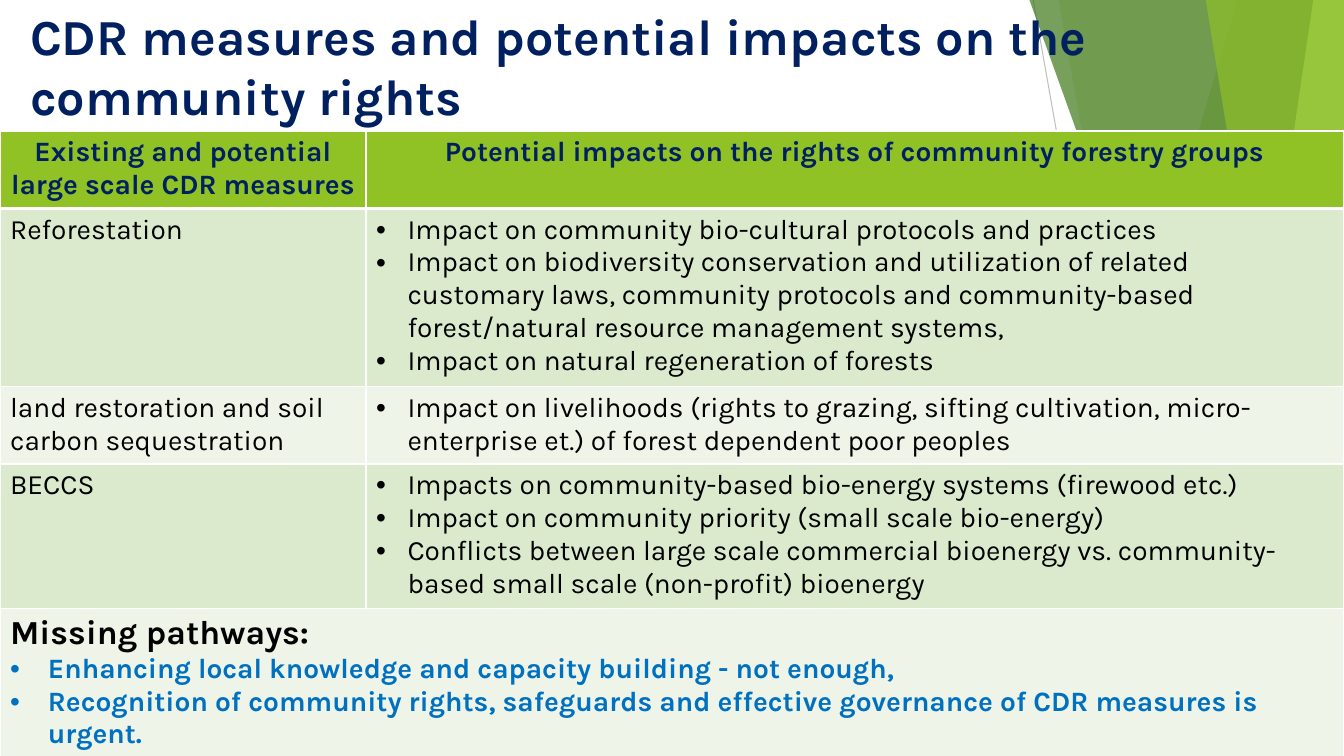
import pptx
import pptx.dml.color
import pptx.enum.shapes
import pptx.enum.text
import pptx.oxml
import pptx.oxml.ns
import pptx.util
from lxml import etree

Pt = pptx.util.Pt
qn = pptx.oxml.ns.qn
ALIGN = pptx.enum.text.PP_ALIGN
W, H, TOP = 960, 540, -0.7
NAVY, GREEN, WHITE, BLACK, BLUE = "002060", "90C226", "FFFFFF", "000000", "0070C0"
BANDS = "DBE9CD", "EEF4E8"

HEADINGS = ("Existing and potential large scale CDR measures",
            "Potential impacts on the rights of community forestry groups")
MEASURES = [
    ("Reforestation", [
        "Impact on community bio-cultural protocols and practices",
        "Impact on biodiversity conservation and utilization of related customary laws, "
        "community protocols and community-based forest/natural resource management systems,",
        "Impact on natural regeneration of forests"]),
    ("land restoration and soil carbon sequestration", [
        "Impact on livelihoods (rights to grazing, sifting cultivation, "
        "micro-enterprise et.) of forest dependent poor peoples"]),
    ("BECCS", [
        "Impacts on community-based bio-energy systems (firewood etc.)",
        "Impact on community priority (small scale bio-energy)",
        "Conflicts between large scale commercial bioenergy vs. "
        "community-based small scale (non-profit) bioenergy"]),
]
MISSING = ["Enhancing local knowledge and capacity building - not enough,",
           "Recognition of community rights, safeguards and effective governance "
           "of CDR measures is urgent."]
COLUMNS = 261.4, 698.4
ROWS = 54, 124.3, 53.8, 101.4, 105.7

LINES = [((738, 0), (833.8, H), "BFBFBF"), ((W, 290.2), (584.6, H), "D9D9D9")]
TRIANGLES = {
    "middle": ((703.4, 239.8, 256.6, 300.2), 1, "54A021", 72),
    "right": ((816.5, 283, 143.5, 257), 1, GREEN, 80),
    "left": ((0, 316.1, 35.3, 223.9), 0, GREEN, 85),
}
BLADES = {
    "pale": (884.2, 722.9, GREEN, 30),
    "faint": (756, 851.8, GREEN, 20),
    "dark": (735.1, 929.5, "3F7819", 70),
    "light": (938.2, 858.2, "C0E474", 70),
    "bright": (861.1, 949, GREEN, 65),
}


def rgb(value):
    """Return the colour for a hex string."""
    return pptx.dml.color.RGBColor.from_string(value)


def paint(s, color, opacity):
    """Give a shape a translucent fill without line or shadow."""
    s.shadow.inherit = False
    s.line.fill.background()
    s.fill.solid()
    s.fill.fore_color.rgb = rgb(color)
    clr = s.fill._xPr.find(".//" + qn("a:srgbClr"))
    etree.SubElement(clr, qn("a:alpha"), val=str(opacity * 1000))


def add_line(shapes, start, end, color):
    """Draw a thin straight line."""
    kind = pptx.enum.shapes.MSO_CONNECTOR.STRAIGHT
    s = shapes.add_connector(kind, *map(Pt, start + end))
    s.line.width = Pt(0.75)
    s.line.color.rgb = rgb(color)
    etree.SubElement(s._element.spPr, qn("a:effectLst"))


def add_blade(shapes, top_x, bottom_x, color, opacity):
    """Draw a slanted panel reaching the right edge of the slide."""
    builder = shapes.build_freeform(Pt(top_x), Pt(TOP))
    corners = (W, TOP), (W, H), (bottom_x, H)
    builder.add_line_segments([(Pt(x), Pt(y)) for x, y in corners])
    paint(builder.convert_to_shape(), color, opacity)


def add_triangle(shapes, box, apex, color, opacity):
    """Draw a triangle with its apex at the given share of its width."""
    kind = pptx.enum.shapes.MSO_SHAPE.ISOSCELES_TRIANGLE
    s = shapes.add_shape(kind, *map(Pt, box))
    s.adjustments[0] = apex
    paint(s, color, opacity)


def write(p, text, size=20, color=BLACK, bold=False, align=ALIGN.LEFT, indent=0):
    """Write one paragraph, bulleted when it has an indent."""
    p.alignment = align
    r = p.add_run()
    r.text = text
    for name, value in {"name": "Karla", "size": Pt(size), "bold": bold}.items():
        setattr(r.font, name, value)
    r.font.color.rgb = rgb(color)
    if indent:
        pPr = p._p.get_or_add_pPr()
        pPr.set("marL", str(Pt(indent)))
        pPr.set("indent", str(-Pt(indent)))
        etree.SubElement(pPr, qn("a:buFont"), typeface="Arial")
        etree.SubElement(pPr, qn("a:buChar"), char="•")


def write_list(tf, texts, **style):
    """Write texts as paragraphs, starting in the first empty one."""
    for text in texts:
        p = tf.paragraphs[-1]
        write(tf.add_paragraph() if p.runs else p, text, **style)


def style_cell(cell, color, bottom=1):
    """Fill a cell and give it white borders."""
    cell.fill.solid()
    cell.fill.fore_color.rgb = rgb(color)
    tcPr = cell._tc.get_or_add_tcPr()
    widths = {"a:lnL": 1, "a:lnR": 1, "a:lnT": 1, "a:lnB": bottom}
    for i, (tag, width) in enumerate(widths.items()):
        ln = etree.Element(qn(tag), w=str(Pt(width)))
        fill = etree.SubElement(ln, qn("a:solidFill"))
        etree.SubElement(fill, qn("a:srgbClr"), val=WHITE)
        tcPr.insert(i, ln)


def add_title(shapes, text):
    """Write the slide title."""
    tf = shapes.add_textbox(Pt(14.4), Pt(0), Pt(936.7), Pt(103.7)).text_frame
    tf.word_wrap = True
    write(tf.paragraphs[0], text, size=36, color=NAVY, bold=True)


def add_measures(shapes):
    """Build the table of measures and their impacts."""
    frame = shapes.add_table(len(ROWS), len(COLUMNS), Pt(0), Pt(93.6),
                             Pt(sum(COLUMNS)), Pt(sum(ROWS)))
    table = frame.table
    for column, width in zip(table.columns, COLUMNS):
        column.width = Pt(width)
    for i, (row, height) in enumerate(zip(table.rows, ROWS)):
        row.height = Pt(height)
        for cell in row.cells:
            style_cell(cell, BANDS[(i - 1) % 2] if i else GREEN, 1 if i else 3)
    for i, text in enumerate(HEADINGS):
        write_list(table.cell(0, i).text_frame, [text], color=NAVY, bold=True,
                   align=ALIGN.CENTER)
    for i, (measure, impacts) in enumerate(MEASURES, 1):
        write_list(table.cell(i, 0).text_frame, [measure])
        write_list(table.cell(i, 1).text_frame, impacts, indent=22.5)
    last = len(ROWS) - 1
    table.cell(last, 0).merge(table.cell(last, 1))
    tf = table.cell(last, 0).text_frame
    write_list(tf, ["Missing pathways:"], size=24, bold=True)
    write_list(tf, MISSING, color=BLUE, bold=True, indent=27)


def main():
    """Build and save the slide."""
    prs = pptx.Presentation()
    prs.slide_width, prs.slide_height = Pt(W), Pt(H)
    shapes = prs.slides.add_slide(prs.slide_layouts[6]).shapes
    for line in LINES:
        add_line(shapes, *line)
    for name in ("pale", "faint"):
        add_blade(shapes, *BLADES[name])
    add_triangle(shapes, *TRIANGLES["middle"])
    for name in ("dark", "light", "bright"):
        add_blade(shapes, *BLADES[name])
    for name in ("right", "left"):
        add_triangle(shapes, *TRIANGLES[name])
    add_title(shapes, "CDR measures and potential impacts on the community rights")
    add_measures(shapes)
    prs.save("out.pptx")


if __name__ == "__main__":
    main()
